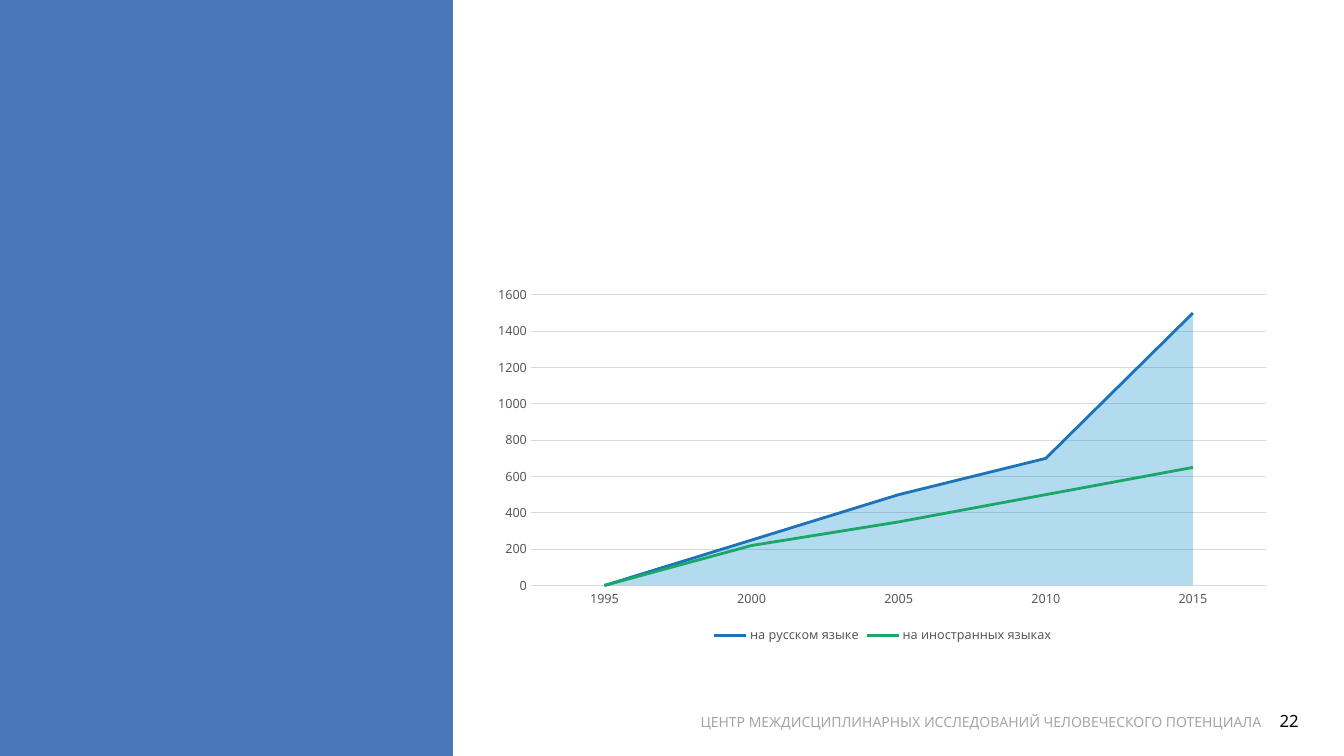
from dataclasses import dataclass
from typing import Any

from lxml.etree import SubElement
from pptx import Presentation
from pptx.chart.chart import Chart
from pptx.chart.data import CategoryChartData
from pptx.dml.color import RGBColor
from pptx.enum.chart import XL_CHART_TYPE, XL_LEGEND_POSITION, XL_MARKER_STYLE, XL_TICK_MARK
from pptx.enum.shapes import MSO_SHAPE
from pptx.enum.text import MSO_ANCHOR, PP_ALIGN
from pptx.oxml import parse_xml
from pptx.oxml.ns import nsdecls, qn
from pptx.slide import Slide
from pptx.util import Inches, Pt

FONT = "Noto Sans"
PANEL_BLUE = "4B76B9"
AREA_BLUE = "0089CC"
LABEL_GREY = "595959"
GRID_GREY = "D9D9D9"
AREA_OPACITY = 30
YEARS = ["1995", "2000", "2005", "2010", "2015"]


@dataclass(frozen=True)
class Label:
    text: str
    left: float
    top: float
    width: float
    height: float
    size: float
    color: str
    alignment: PP_ALIGN


@dataclass(frozen=True)
class Series:
    name: str
    values: tuple[int, ...]
    color: str


LABELS = [
    Label("ЦЕНТР МЕЖДИСЦИПЛИНАРНЫХ ИССЛЕДОВАНИЙ ЧЕЛОВЕЧЕСКОГО ПОТЕНЦИАЛА",
          6.85, 7.05, 5.84, 0.23, 10, "A6A6A6", PP_ALIGN.LEFT),
    Label("22", 12.44, 6.95, 0.54, 0.4, 12, "000000", PP_ALIGN.RIGHT),
]
AREAS = [
    Series("Series 1", (0, 220, 350, 500, 650), AREA_BLUE),
    Series("Series 2", (0, 30, 150, 200, 850), AREA_BLUE),
]
LINES = [
    Series("на русском языке", (0, 250, 500, 700, 1500), "1C73B9"),
    Series("на иностранных языках", (0, 220, 350, 500, 650), "1BA767"),
]


def rgb(color: str) -> RGBColor:
    return RGBColor.from_string(color)


def set_values(target: Any, values: dict[str, Any]) -> None:
    for name, value in values.items():
        setattr(target, name, value)


def set_font(font: Any, size: float, color: str) -> None:
    set_values(font, {"name": FONT, "size": Pt(size), "bold": False})
    font.color.rgb = rgb(color)


def set_line(line: Any, color: str, width: float) -> None:
    line.color.rgb = rgb(color)
    line.width = Pt(width)


def add_panel(slide: Slide) -> None:
    panel = slide.shapes.add_shape(
        MSO_SHAPE.RECTANGLE, Inches(0), Inches(0), Inches(4.49), Inches(7.5))
    panel.shadow.inherit = False
    panel.fill.solid()
    panel.fill.fore_color.rgb = rgb(PANEL_BLUE)
    set_line(panel.line, PANEL_BLUE, 1)


def add_label(slide: Slide, label: Label) -> None:
    box = slide.shapes.add_textbox(
        Inches(label.left), Inches(label.top), Inches(label.width), Inches(label.height))
    set_values(box.text_frame, {"word_wrap": True, "vertical_anchor": MSO_ANCHOR.MIDDLE})
    paragraph = box.text_frame.paragraphs[0]
    paragraph.alignment = label.alignment
    run = paragraph.add_run()
    run.text = label.text
    set_font(run.font, label.size, label.color)


def split_off_lines(chart: Chart) -> None:
    """Move the series after the areas into a line plot on the same axes."""
    area_plot = chart.plots[0]._element
    line_plot = parse_xml(
        f'<c:lineChart {nsdecls("c")}><c:grouping val="standard"/><c:varyColors val="0"/>'
        '<c:marker val="1"/></c:lineChart>')
    marker = line_plot.find(qn("c:marker"))
    for series in area_plot.findall(qn("c:ser"))[len(AREAS):]:
        marker.addprevious(series)
    for axis in area_plot.findall(qn("c:axId")):
        SubElement(line_plot, qn("c:axId"), val=axis.get("val"))
    area_plot.addnext(line_plot)


def set_plot_layout(chart: Chart, fractions: dict[str, float]) -> None:
    plot_area = chart._chartSpace.find(f".//{qn('c:plotArea')}")
    for layout in plot_area.findall(qn("c:layout")):
        plot_area.remove(layout)
    layout = parse_xml(f'<c:layout {nsdecls("c")}/>')
    plot_area.insert(0, layout)
    manual = SubElement(layout, qn("c:manualLayout"))
    settings = {"layoutTarget": "inner", "xMode": "edge", "yMode": "edge", **fractions}
    for name, value in settings.items():
        SubElement(manual, qn(f"c:{name}"), val=str(value))


def style_series(chart: Chart) -> None:
    area_plot, line_plot = chart.plots
    for series, area in zip(area_plot.series, AREAS):
        fill = series.format.fill
        fill.solid()
        fill.fore_color.rgb = rgb(area.color)
        color = series._element.find(f".//{qn('a:srgbClr')}")
        SubElement(color, qn("a:alpha"), val=str(AREA_OPACITY * 1000))
        series.format.line.fill.background()
    for series, line in zip(line_plot.series, LINES):
        set_line(series.format.line, line.color, 2)
        series.marker.style = XL_MARKER_STYLE.NONE
        series.smooth = False


def style_axes(chart: Chart) -> None:
    for axis in (chart.category_axis, chart.value_axis):
        set_values(axis, {"major_tick_mark": XL_TICK_MARK.NONE,
                          "minor_tick_mark": XL_TICK_MARK.NONE})
        set_font(axis.tick_labels.font, 9, LABEL_GREY)
    chart.category_axis.has_major_gridlines = False
    set_line(chart.category_axis.format.line, GRID_GREY, 0.75)
    value_axis = chart.value_axis
    set_values(value_axis, {"minimum_scale": 0, "maximum_scale": 1600, "major_unit": 200,
                            "has_major_gridlines": True})
    value_axis.format.line.fill.background()
    set_line(value_axis.major_gridlines.format.line, GRID_GREY, 0.75)
    value_axis._element.find(qn("c:crossBetween")).set("val", "between")


def add_legend(chart: Chart) -> None:
    """Show a legend at the bottom that leaves out the areas."""
    chart.has_legend = True
    legend = chart.legend
    set_values(legend, {"position": XL_LEGEND_POSITION.BOTTOM, "include_in_layout": False})
    set_font(legend.font, 9, LABEL_GREY)
    position = legend._element.find(qn("c:legendPos"))
    for index in reversed(range(len(AREAS))):
        position.addnext(parse_xml(
            f'<c:legendEntry {nsdecls("c")}><c:idx val="{index}"/>'
            '<c:delete val="1"/></c:legendEntry>'))


def add_publications_chart(slide: Slide) -> None:
    data = CategoryChartData()
    data.categories = YEARS
    for series in AREAS + LINES:
        data.add_series(series.name, series.values)
    chart = slide.shapes.add_chart(
        XL_CHART_TYPE.AREA_STACKED, Inches(4.79), Inches(2.78), Inches(7.93), Inches(3.65),
        data).chart
    chart.has_title = False
    set_font(chart.font, 10, "000000")
    split_off_lines(chart)
    set_plot_layout(chart, {"x": 0.06, "y": 0.04, "w": 0.92, "h": 0.79})
    style_series(chart)
    style_axes(chart)
    add_legend(chart)


def main() -> None:
    presentation = Presentation()
    set_values(presentation, {"slide_width": Inches(13.33), "slide_height": Inches(7.5)})
    slide = presentation.slides.add_slide(presentation.slide_layouts[6])
    add_panel(slide)
    for label in LABELS:
        add_label(slide, label)
    add_publications_chart(slide)
    presentation.save("out.pptx")


if __name__ == "__main__":
    main()
